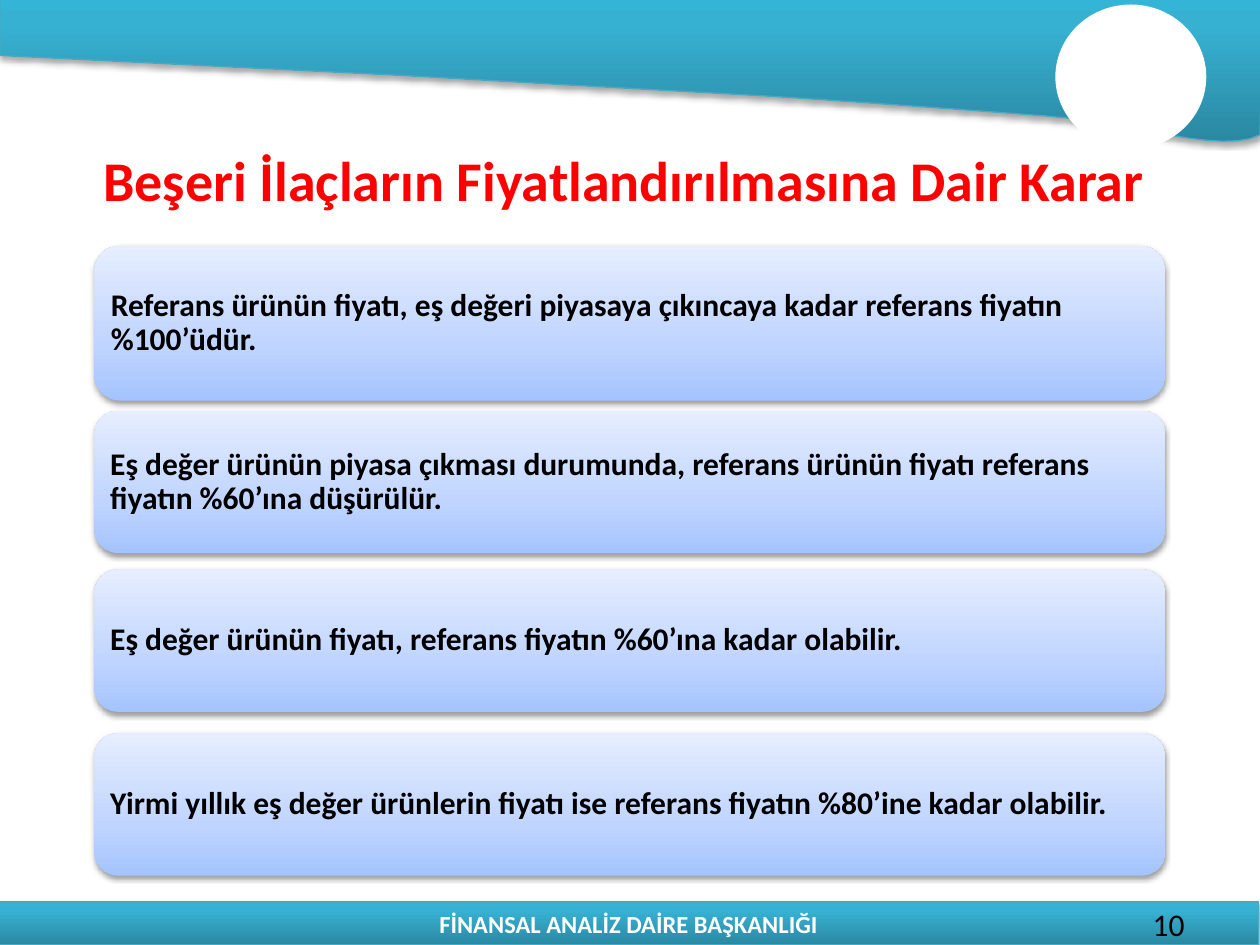
from copy import deepcopy

from lxml import etree
from pptx import Presentation
from pptx.dml.color import RGBColor
from pptx.enum import shapes, text
from pptx.oxml import parse_xml
from pptx.oxml.ns import nsdecls, qn
from pptx.util import Inches, Pt

WHITE = RGBColor(0xFF, 0xFF, 0xFF)
BLACK = RGBColor(0, 0, 0)
RED = RGBColor(0xFF, 0, 0)
TEAL_LINE = RGBColor(0x46, 0xAA, 0xC5)
TEAL_STOPS = [(0, RGBColor(0x2A, 0x88, 0xA2)), (0.8, RGBColor(0x37, 0xB1, 0xD2)),
              (1, RGBColor(0x34, 0xB4, 0xD6))]
BLUE_STOPS = [(0, RGBColor(0xA4, 0xC4, 0xFF)), (0.35, RGBColor(0xBF, 0xD4, 0xFF)),
              (1, RGBColor(0xE6, 0xEE, 0xFF))]


def style_panel(shape, stops, line_color, shadow_opacity):
    shape.fill.gradient()
    shape.fill.gradient_angle = 90
    stop_list = shape.element.spPr.find(qn("a:gradFill")).find(qn("a:gsLst"))
    stop_list.append(deepcopy(stop_list[0]))
    for stop, (position, color) in zip(shape.fill.gradient_stops, stops):
        stop.position = position
        stop.color.rgb = color
    if line_color is None:
        shape.line.fill.background()
    else:
        shape.line.color.rgb = line_color
        shape.line.width = Pt(0.75)
    shape.shadow.inherit = False
    effects = shape.element.spPr.find(qn("a:effectLst"))
    effects.append(parse_xml(
        f'<a:outerShdw {nsdecls("a")} blurRad="{Pt(3.1)}" dist="{Pt(1.7)}" dir="5400000" '
        f'rotWithShape="0"><a:srgbClr val="000000"><a:alpha val="{shadow_opacity * 1000}"/>'
        '</a:srgbClr></a:outerShdw>'))


def write_text(shape, words, size, color, bold, alignment):
    frame = shape.text_frame
    frame.text = words
    frame.word_wrap = True
    paragraph = frame.paragraphs[0]
    paragraph.alignment = alignment
    font = paragraph.runs[0].font
    font.name = "Calibri"
    font.size = Pt(size)
    font.bold = bold
    font.color.rgb = color
    return frame


presentation = Presentation()
presentation.slide_width = Inches(10)
presentation.slide_height = Inches(7.5)
slide = presentation.slides.add_slide(presentation.slide_layouts[5])

wave_points = [(10.03, -0.03), (10, 1.07)]
wave_curves = [((9.71, 1.23), (8.96, 0.97), (8.3, 0.92)),
               ((7.64, 0.87), (6.7, 0.8), (6.05, 0.76))]
steps = 12
for control_a, control_b, end in wave_curves:
    start = wave_points[-1]
    for step in range(1, steps + 1):
        t = step / steps
        wave_points.append(tuple(
            (1 - t) ** 3 * p + 3 * (1 - t) ** 2 * t * a + 3 * (1 - t) * t ** 2 * b + t ** 3 * e
            for p, a, b, e in zip(start, control_a, control_b, end)))
wave_points += [(4.44, 0.67), (3.22, 0.6), (1.41, 0.51), (0, 0.44)]
builder = slide.shapes.build_freeform(Inches(0), Inches(-0.03))
builder.add_line_segments([(Inches(x), Inches(y)) for x, y in wave_points], close=True)
header_wave = builder.convert_to_shape()
style_panel(header_wave, TEAL_STOPS, TEAL_LINE, 35)

circle = slide.shapes.add_shape(shapes.MSO_SHAPE.OVAL, Inches(8.39), Inches(0.05),
                                Inches(1.17), Inches(1.12))
circle.shadow.inherit = False
circle.fill.solid()
circle.fill.fore_color.rgb = WHITE
circle.line.color.rgb = WHITE
circle.line.width = Pt(2)

footer = slide.shapes.add_shape(shapes.MSO_SHAPE.RECTANGLE, Inches(-0.01), Inches(7.16),
                                Inches(10), Inches(0.34))
style_panel(footer, TEAL_STOPS, TEAL_LINE, 35)
frame = write_text(footer, "FİNANSAL ANALİZ DAİRE BAŞKANLIĞI", 14, WHITE, True,
                   text.PP_ALIGN.CENTER)
frame.vertical_anchor = text.MSO_ANCHOR.MIDDLE

page_number = slide.shapes.add_textbox(Inches(7.17), Inches(7.13), Inches(2.33), Inches(0.4))
write_text(page_number, "10", 18, BLACK, False, text.PP_ALIGN.RIGHT)

title = slide.shapes.title
title.left, title.top = Inches(0.51), Inches(1.07)
title.width, title.height = Inches(8.89), Inches(0.71)
frame = write_text(title, "Beşeri İlaçların Fiyatlandırılmasına Dair Karar", 32, RED, True,
                   text.PP_ALIGN.CENTER)
frame.vertical_anchor = text.MSO_ANCHOR.MIDDLE

rules = [
    (1.95, 1.23, "Referans ürünün fiyatı, eş değeri piyasaya çıkıncaya kadar referans fiyatın "
                 "%100’üdür."),
    (3.26, 1.13, "Eş değer ürünün piyasa çıkması durumunda, referans ürünün fiyatı referans "
                 "fiyatın %60’ına düşürülür."),
    (4.52, 1.13, "Eş değer ürünün fiyatı, referans fiyatın %60’ına kadar olabilir."),
    (5.82, 1.13, "Yirmi yıllık eş değer ürünlerin fiyatı ise referans fiyatın %80’ine kadar "
                 "olabilir."),
]
for top, height, words in rules:
    rule_box = slide.shapes.add_shape(shapes.MSO_SHAPE.ROUNDED_RECTANGLE, Inches(0.75),
                                      Inches(top), Inches(8.5), Inches(height))
    style_panel(rule_box, BLUE_STOPS, None, 38)
    frame = write_text(rule_box, words, 18, BLACK, True, text.PP_ALIGN.LEFT)
    frame.vertical_anchor = text.MSO_ANCHOR.MIDDLE
    frame.margin_left = frame.margin_right = Inches(0.07)
    frame.paragraphs[0].line_spacing = 0.9

presentation.save("out.pptx")
